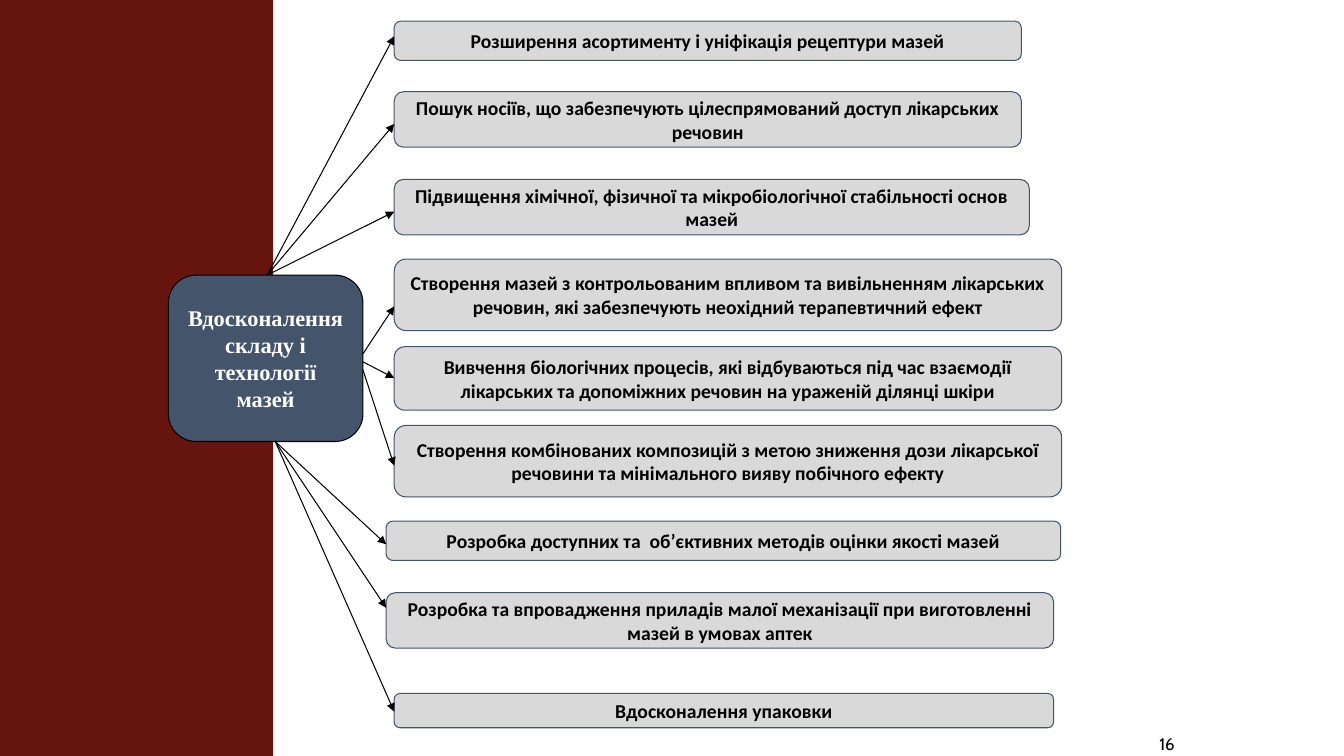
from lxml import etree
from pptx import Presentation
from pptx.dml.color import RGBColor
from pptx.enum.shapes import MSO_CONNECTOR, MSO_SHAPE
from pptx.enum.text import MSO_ANCHOR, PP_ALIGN
from pptx.oxml.ns import qn
from pptx.util import Pt

PX = 9144  # one px is a hundredth of an inch
STRAIGHT = MSO_CONNECTOR.STRAIGHT
RECTANGLE = MSO_SHAPE.RECTANGLE
ROUNDED = MSO_SHAPE.FLOWCHART_ALTERNATE_PROCESS
MIDDLE, BOTTOM = MSO_ANCHOR.MIDDLE, MSO_ANCHOR.BOTTOM
CENTER, RIGHT = PP_ALIGN.CENTER, PP_ALIGN.RIGHT

THEME = {
    "band": RGBColor(0x65, 0x14, 0x0E),
    "slate": RGBColor(0x44, 0x54, 0x6A),
    "grey": RGBColor(0xD9, 0xD9, 0xD9),
    "black": RGBColor(0, 0, 0),
    "white": RGBColor(255, 255, 255),
    "topic": ("Times New Roman", 16),
    "measure": ("Calibri", 14),
    "number": ("Cabin", 12),
    "line": Pt(0.75),
}


def add_box(shape_type, bounds, fill, line=None):
    box = slide.shapes.add_shape(shape_type, *(n * PX for n in bounds))
    box.shadow.inherit = False
    box.fill.solid()
    box.fill.fore_color.rgb = THEME[fill]
    if line:
        box.line.color.rgb = THEME[line]
        box.line.width = THEME["line"]
    else:
        box.line.fill.background()
    return box


def write(box, text, style, color, align, anchor, bold=True):
    frame = box.text_frame
    frame.word_wrap = True
    frame.vertical_anchor = anchor
    para = frame.paragraphs[0]
    para.text = text
    para.alignment = align
    name, size = THEME[style]
    para.font.name = name
    para.font.size = Pt(size)
    para.font.bold = bold
    para.font.color.rgb = THEME[color]


deck = Presentation()
deck.slide_width, deck.slide_height = 1333 * PX, 750 * PX
slide = deck.slides.add_slide(deck.slide_layouts[6])

# Side band and page number
add_box(RECTANGLE, (0, 0, 271, 750), "band")
number = slide.shapes.add_textbox(942 * PX, 703 * PX, 233 * PX, 50 * PX)
write(number, "16", "number", "black", RIGHT, BOTTOM, bold=False)

# Central topic
topic = add_box(ROUNDED, (167, 273, 193, 165), "slate", "black")
write(topic, "Вдосконалення складу і технології мазей", "topic", "white", CENTER, MIDDLE)

# Measures: box bounds, arrow start, arrow end height, text
TOP, FOOT = (265, 273), (273, 438)
measures = [
    ((391, 21, 622, 39), TOP, 36,
     "Розширення асортименту і уніфікація рецептури мазей"),
    ((391, 91, 622, 55), TOP, 123,
     "Пошук носіїв, що забезпечують цілеспрямований доступ лікарських речовин"),
    ((391, 178, 630, 55), TOP, 210,
     "Підвищення хімічної, фізичної та мікробіологічної стабільності основ мазей"),
    ((391, 257, 662, 71), (360, 351), 304,
     "Створення мазей з контрольованим впливом та вивільненням лікарських речовин, "
     "які забезпечують неохідний терапевтичний ефект"),
    ((391, 344, 662, 63), (360, 359), 375,
     "Вивчення біологічних процесів, які відбуваються під час взаємодії лікарських "
     "та допоміжних речовин на ураженій ділянці шкіри"),
    ((391, 422, 662, 71), (360, 367), 462,
     "Створення комбінованих композицій з метою зниження дози лікарської речовини "
     "та мінімального вияву побічного ефекту"),
    ((383, 517, 669, 39), FOOT, 540,
     "Розробка доступних та  об’єктивних методів оцінки якості мазей"),
    ((383, 588, 662, 55), FOOT, 603,
     "Розробка та впровадження приладів малої механізації при виготовленні мазей "
     "в умовах аптек"),
    ((391, 688, 654, 34), FOOT, 706, "Вдосконалення упаковки"),
]

for bounds, start, end_y, text in measures:
    box = add_box(ROUNDED, bounds, "grey", "slate")
    write(box, text, "measure", "black", CENTER, MIDDLE)
    frame = box.text_frame
    frame.margin_left = frame.margin_right = frame.margin_top = frame.margin_bottom = 0

    # Arrow from the topic to the left edge of the box
    ends = (*start, bounds[0], end_y)
    arrow = slide.shapes.add_connector(STRAIGHT, *(n * PX for n in ends))
    arrow.line.color.rgb = THEME["black"]
    arrow.line.width = THEME["line"]
    etree.SubElement(arrow.line._get_or_add_ln(), qn("a:tailEnd"), type="triangle")
    etree.SubElement(arrow._element.spPr, qn("a:effectLst"))

deck.save("out.pptx")
